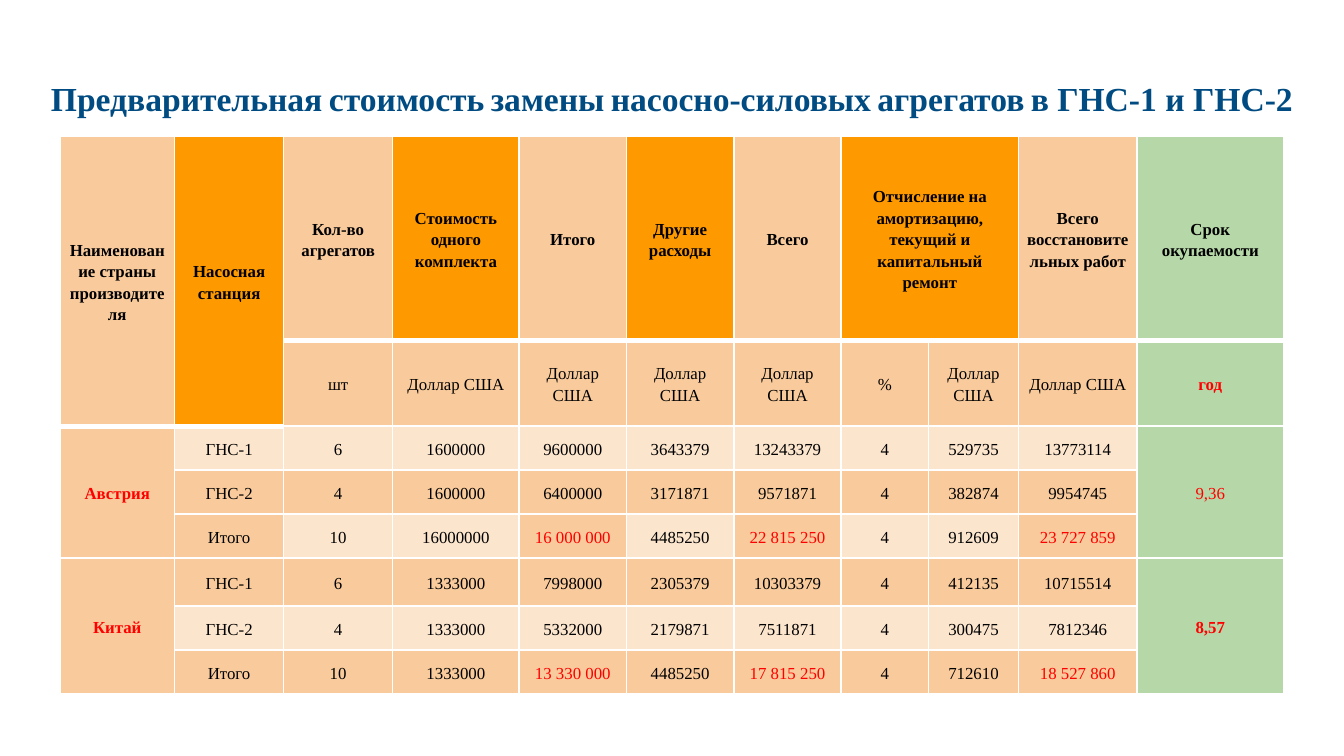
from dataclasses import dataclass
from typing import NamedTuple

from lxml.etree import SubElement
from pptx import Presentation
from pptx.dml.color import RGBColor
from pptx.enum.text import MSO_ANCHOR as Anchor, MSO_AUTO_SIZE as AutoSize, PP_ALIGN as Align
from pptx.oxml.ns import qn
from pptx.util import Cm, Pt


@dataclass(frozen=True)
class Theme:
    font: str = "Times New Roman"
    title: str = "004B81"
    text: str = "000000"
    accent: str = "FF0000"
    border: str = "FFFFFF"
    light: str = "F9CB9C"
    pale: str = "FCE5CD"
    orange: str = "FF9900"
    green: str = "B6D7A8"
    title_size: float = 18
    gap_size: float = 13.5
    cell_size: float = 9
    thin: float = 1
    thick: float = 3


class Span(NamedTuple):
    row: int
    column: int
    last_row: int
    last_column: int


class Look(NamedTuple):
    fill: str
    color: str
    bold: bool


THEME = Theme()
TITLE = ["Предварительная", "стоимость", "замены", "насосно-силовых", "агрегатов",
         "в ГНС-1 и ГНС-2"]
COLUMN_WIDTHS = [2.17, 2.06, 2.06, 2.39, 2.03, 2.03, 2.03, 1.65, 1.7, 2.24, 2.77]
ROW_HEIGHTS = [3.86, 1.61, 0.83, 0.83, 0.83, 0.91, 0.83, 0.83]
DOLLAR = "Доллар США"
ROWS = [
    ["Наименование страны производителя", "Насосная станция", "Кол-во агрегатов",
     "Стоимость одного комплекта", "Итого", "Другие расходы", "Всего",
     "Отчисление на амортизацию, текущий и капитальный ремонт", "",
     "Всего восстановительных работ", "Срок окупаемости"],
    ["", "", "шт", DOLLAR, DOLLAR, DOLLAR, DOLLAR, "%", DOLLAR, DOLLAR, "год"],
    ["Австрия", "ГНС-1", "6", "1600000", "9600000", "3643379", "13243379", "4",
     "529735", "13773114", "9,36"],
    ["", "ГНС-2", "4", "1600000", "6400000", "3171871", "9571871", "4",
     "382874", "9954745", ""],
    ["", "Итого", "10", "16000000", "16 000 000", "4485250", "22 815 250", "4",
     "912609", "23 727 859", ""],
    ["Китай", "ГНС-1", "6", "1333000", "7998000", "2305379", "10303379", "4",
     "412135", "10715514", "8,57"],
    ["", "ГНС-2", "4", "1333000", "5332000", "2179871", "7511871", "4",
     "300475", "7812346", ""],
    ["", "Итого", "10", "1333000", "13 330 000", "4485250", "17 815 250", "4",
     "712610", "18 527 860", ""],
]
SPANS = [Span(0, 0, 1, 0), Span(0, 1, 1, 1), Span(0, 7, 0, 8)] + [
    Span(top, column, top + 2, column) for top in (2, 5) for column in (0, 10)]
PALE_ROWS = (2, 4, 6)
TOTAL_ROWS = (4, 7)
TOTAL_COLUMNS = (4, 6, 9)
LAST_COLUMN = len(COLUMN_WIDTHS) - 1


def cell_look(row: int, column: int) -> Look:
    """Choose the fill, text colour and weight of a cell from its place."""
    is_total = row in TOTAL_ROWS and column in TOTAL_COLUMNS
    is_country = column == 0 and row > 1
    is_payback = column == LAST_COLUMN and row > 0
    is_station_total = column == 1 and row in TOTAL_ROWS
    if column == LAST_COLUMN:
        fill = THEME.green
    elif row == 0 and column in (1, 3, 5, 7):
        fill = THEME.orange
    elif row in PALE_ROWS and column > 0 and not (is_total or is_station_total):
        fill = THEME.pale
    else:
        fill = THEME.light
    color = THEME.accent if is_total or is_country or is_payback else THEME.text
    bold = row == 0 or is_country or (is_payback and row != 2)
    return Look(fill, color, bold)


def set_borders(cell, row: int, column: int) -> None:
    """Outline a cell thinly, with a thick line under the header."""
    header_end = 2 if column < 2 else 1
    widths = {
        "a:lnL": THEME.thin,
        "a:lnR": THEME.thin,
        "a:lnT": THEME.thick if row == header_end else THEME.thin,
        "a:lnB": THEME.thick if row < header_end else THEME.thin,
    }
    properties = cell._tc.get_or_add_tcPr()
    for tag, width in widths.items():
        line = SubElement(properties, qn(tag), w=str(Pt(width)))
        fill = SubElement(line, qn("a:solidFill"))
        SubElement(fill, qn("a:srgbClr"), val=THEME.border)


def format_cell(cell, text: str, row: int, column: int) -> None:
    """Write and style one table cell."""
    look = cell_look(row, column)
    cell.text = text
    cell.vertical_anchor = Anchor.MIDDLE
    cell.margin_left = cell.margin_right = Cm(0.15)
    cell.margin_top = cell.margin_bottom = 0
    set_borders(cell, row, column)
    cell.fill.solid()
    cell.fill.fore_color.rgb = RGBColor.from_string(look.fill)
    para = cell.text_frame.paragraphs[0]
    para.alignment = Align.CENTER
    para.line_spacing = 1.15
    para.font.name = THEME.font
    para.font.size = Pt(THEME.cell_size)
    para.font.bold = look.bold
    para.font.color.rgb = RGBColor.from_string(look.color)


def add_costs(page) -> None:
    """Add the cost table."""
    frame = page.shapes.add_table(
        len(ROWS), len(COLUMN_WIDTHS), Cm(1.13), Cm(2.58),
        Cm(sum(COLUMN_WIDTHS)), Cm(sum(ROW_HEIGHTS)))
    table = frame.table
    table.first_row = table.horz_banding = False
    for column, width in zip(table.columns, COLUMN_WIDTHS):
        column.width = Cm(width)
    for row, height in zip(table.rows, ROW_HEIGHTS):
        row.height = Cm(height)
    for row, texts in enumerate(ROWS):
        for column, text in enumerate(texts):
            format_cell(table.cell(row, column), text, row, column)
    for span in SPANS:
        table.cell(span.row, span.column).merge(table.cell(span.last_row, span.last_column))


def add_span(para, text: str, size: float, bold: bool) -> None:
    """Append a run of the given size and weight."""
    span = para.add_run()
    span.text = text
    span.font.size = Pt(size)
    span.font.bold = bold


def write_title(page) -> None:
    """Place the title and fill it with bold words and narrow gaps."""
    box = page.shapes.title
    box.left, box.top, box.width, box.height = 0, Cm(1.35), Cm(25.4), Cm(1.02)
    frame = box.text_frame
    frame.word_wrap = True
    frame.auto_size = AutoSize.NONE
    frame.vertical_anchor = Anchor.MIDDLE
    para = frame.paragraphs[0]
    para.alignment = Align.CENTER
    para.font.name = THEME.font
    para.font.color.rgb = RGBColor.from_string(THEME.title)
    for index, word in enumerate(TITLE):
        if index:
            add_span(para, " ", THEME.gap_size, False)
        add_span(para, word, THEME.title_size, True)


def main() -> None:
    """Build the deck and save it."""
    deck = Presentation()
    deck.slide_width, deck.slide_height = Cm(25.4), Cm(14.29)
    page = deck.slides.add_slide(deck.slide_layouts[5])
    write_title(page)
    add_costs(page)
    deck.save("out.pptx")


if __name__ == "__main__":
    main()
